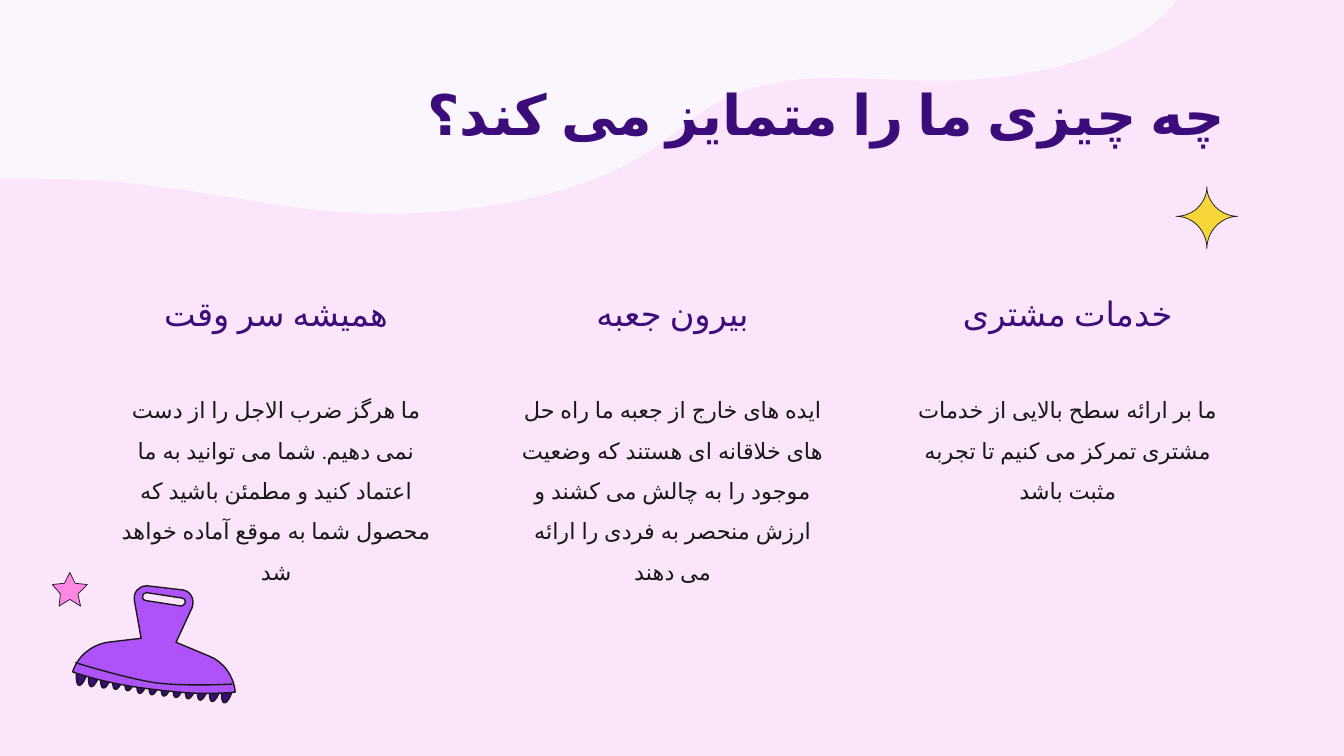
import math

import pptx
import pptx.dml.color
import pptx.enum.lang
import pptx.enum.text
import pptx.oxml
import pptx.oxml.ns
import pptx.util

PX = 9144
SLIDE_WIDTH = 1000 * PX
INSET = 10 * PX
ALIGN = pptx.enum.text.PP_ALIGN
ANCHOR = pptx.enum.text.MSO_ANCHOR

COLORS = {
    "background": "FBE5FA",
    "wave": "FBF5FD",
    "star": "FF87E4",
    "sparkle": "F8D639",
    "ornament_line": "161B24",
    "heading": "3B0D7B",
    "body": "191919",
    "brush": "AE53F9",
    "bristle": "3B0D7B",
    "brush_line": "191919",
}

FORMATS = {
    "title": {
        "color": "heading",
        "frame": {"vertical_anchor": ANCHOR.TOP},
        "paragraph": {"alignment": ALIGN.RIGHT},
        "font": {"name": "Roboto", "size": pptx.util.Pt(30), "bold": True},
    },
    "heading": {
        "color": "heading",
        "frame": {"vertical_anchor": ANCHOR.BOTTOM},
        "paragraph": {"alignment": ALIGN.CENTER},
        "font": {"name": "Roboto", "size": pptx.util.Pt(18)},
    },
    "body": {
        "color": "body",
        "frame": {"vertical_anchor": ANCHOR.TOP},
        "paragraph": {"alignment": ALIGN.CENTER, "line_spacing": 1.5},
        "font": {"name": "Montserrat", "size": pptx.util.Pt(12)},
    },
}

FRAME = {
    "word_wrap": True,
    "margin_left": INSET,
    "margin_right": INSET,
    "margin_top": INSET,
    "margin_bottom": INSET,
}

TITLE = "چه چیزی ما را متمایز می کند؟"
STRENGTHS = [
    ("همیشه سر وقت",
     "ما هرگز ضرب الاجل را از دست نمی دهیم. شما می توانید به ما اعتماد کنید "
     "و مطمئن باشید که محصول شما به موقع آماده خواهد شد"),
    ("بیرون جعبه",
     "ایده های خارج از جعبه ما راه حل های خلاقانه ای هستند که وضعیت موجود را "
     "به چالش می کشند و ارزش منحصر به فردی را ارائه می دهند"),
    ("خدمات مشتری",
     "ما بر ارائه سطح بالایی از خدمات مشتری تمرکز می کنیم تا تجربه مثبت باشد"),
]

WAVE = [(876, 0), (865, 14, 850, 26, 826, 37), (793, 51, 745, 60, 697, 60),
        (671, 60, 645, 58, 620, 58), (605, 58, 590, 59, 576, 62),
        (528, 70, 510, 95, 481, 114), (439, 142, 363, 159, 286, 159),
        (273, 159, 260, 158, 246, 157), (199, 153, 156, 143, 110, 138),
        (83, 134, 54, 133, 26, 133), (17, 133, 9, 133, 0, 133), (0, 0)]
STAR = [(13, 0), (9, 8), (0, 9), (6, 16), (5, 25),
        (13, 20), (21, 25), (19, 16), (26, 9), (17, 8)]
SPARKLE = [(23, 0), (23, 12, 13, 22, 0, 22), (13, 22, 23, 33, 23, 46),
           (23, 33, 34, 22, 46, 22), (34, 22, 23, 12, 23, 0)]
BRISTLE = [(1, 0), (1, 0, 0, 10, 3, 10), (6, 10, 9, 1, 9, 1)]
BRUSH_BODY = [(55, 0), (49, 0, 45, 5, 46, 11), (51, 39), (26, 42),
              (14, 44, 4, 52, 0, 64), (0, 64, 24, 73, 60, 77),
              (76, 79, 89, 80, 99, 80), (113, 80, 121, 79, 121, 79),
              (120, 67, 112, 56, 101, 52), (77, 42), (89, 16),
              (91, 10, 88, 4, 82, 3), (56, 0)]
HANDLE_HOLE = [(55, 5), (81, 9), (83, 9, 84, 10, 84, 12),
               (84, 13, 82, 15, 81, 15), (55, 11),
               (53, 11, 52, 10, 52, 8), (52, 7, 53, 5, 55, 5)]
BRUSH_SEAM = [(0, 0), (0, 0, 35, 11, 59, 15), (83, 18, 117, 16, 117, 16)]


def rgb(role):
    """Return the colour of a role."""
    return pptx.dml.color.RGBColor.from_string(COLORS[role])


def apply(target, values):
    """Set every attribute in values on target."""
    for attribute, value in values.items():
        setattr(target, attribute, value)


def bend(outline, contours):
    """Merge each three segments that stand for a curve into a cubic one."""
    qn = pptx.oxml.ns.qn
    segments = iter(outline._element.findall(".//" + qn("a:lnTo")))
    for part in (part for contour in contours for part in contour[1:]):
        first, *others = [next(segments) for _ in range(len(part) // 2)]
        if others:
            first.tag = qn("a:cubicBezTo")
            for segment in others:
                first.append(segment[0])
                segment.getparent().remove(segment)


def draw_outline(shapes, left, top, contours, fill=None, line=None, weight=0.75):
    """Draw contours as one shape, open when it has no fill."""
    builder = None
    for contour in contours:
        start, *points = [((left + part[i]) * PX, (top + part[i + 1]) * PX)
                          for part in contour for i in range(0, len(part), 2)]
        if builder:
            builder.move_to(*start)
        else:
            builder = shapes.build_freeform(*start, scale=1.0)
        builder.add_line_segments(points, close=fill is not None)
    outline = builder.convert_to_shape()
    bend(outline, contours)
    outline.shadow.inherit = False
    if fill:
        outline.fill.solid()
        outline.fill.fore_color.rgb = rgb(fill)
    else:
        outline.fill.background()
    if line:
        outline.line.color.rgb = rgb(line)
        outline.line.width = pptx.util.Pt(weight)
    else:
        outline.line.fill.background()


def write(slide, box, wording, style):
    """Write right-to-left wording into a box."""
    look = FORMATS[style]
    frame = slide.shapes.add_textbox(*(length * PX for length in box)).text_frame
    paragraph = frame.paragraphs[0]
    run = paragraph.add_run()
    run.text = wording
    apply(frame, FRAME | look["frame"])
    apply(paragraph, look["paragraph"])
    apply(run.font, look["font"])
    run.font.language_id = pptx.enum.lang.MSO_LANGUAGE_ID.FARSI
    run.font.color.rgb = rgb(look["color"])
    paragraph._p.get_or_add_pPr().set("rtl", "1")
    complex_script = pptx.oxml.parse_xml(
        '<a:cs xmlns:a="http://schemas.openxmlformats.org/drawingml/2006/main"/>')
    complex_script.set("typeface", look["font"]["name"])
    run.font._element.append(complex_script)


def add_ornaments(slide, left, top):
    """Place the wave, star and sparkle."""
    shapes = slide.shapes
    draw_outline(shapes, left, top, [WAVE], "wave")
    draw_outline(shapes, left + 39, top + 426, [STAR], "star", "ornament_line", 0.41)
    draw_outline(shapes, left + 875, top + 139, [SPARKLE], "sparkle", "ornament_line", 0.41)


def add_strengths(slide, left, top, width, column_width):
    """Spread the headings and texts over equal columns."""
    step = (width - column_width) / (len(STRENGTHS) - 1)
    for index, (heading, body) in enumerate(STRENGTHS):
        column_left = left + math.ceil(index * step)
        write(slide, (column_left, top, column_width, 46), heading, "heading")
        write(slide, (column_left, top + 63, column_width, 112), body, "body")


def add_brush(slide, left, top):
    """Draw the brush with its row of bristles."""
    shapes = slide.shapes.add_group_shape().shapes
    for index in range(13):
        draw_outline(shapes, left + 2 + 9 * index, top + 64 + round(1.1 * index),
                     [BRISTLE], "bristle", "brush_line")
    draw_outline(shapes, left, top, [BRUSH_BODY, HANDLE_HOLE], "brush", "brush_line")
    draw_outline(shapes, left + 2, top + 57, [BRUSH_SEAM], line="brush_line")


def main():
    """Build and save the slide."""
    deck = pptx.Presentation()
    apply(deck, {"slide_width": SLIDE_WIDTH, "slide_height": SLIDE_WIDTH * 9 // 16})
    slide = deck.slides.add_slide(deck.slide_layouts[6])
    slide.background.fill.solid()
    slide.background.fill.fore_color.rgb = rgb("background")
    add_ornaments(slide, 0, 0)
    write(slide, (79, 49, 843, 63), TITLE, "title")
    add_strengths(slide, 79, 212, 842, 253)
    add_brush(slide, 54, 436)
    deck.save("out.pptx")


if __name__ == "__main__":
    main()
